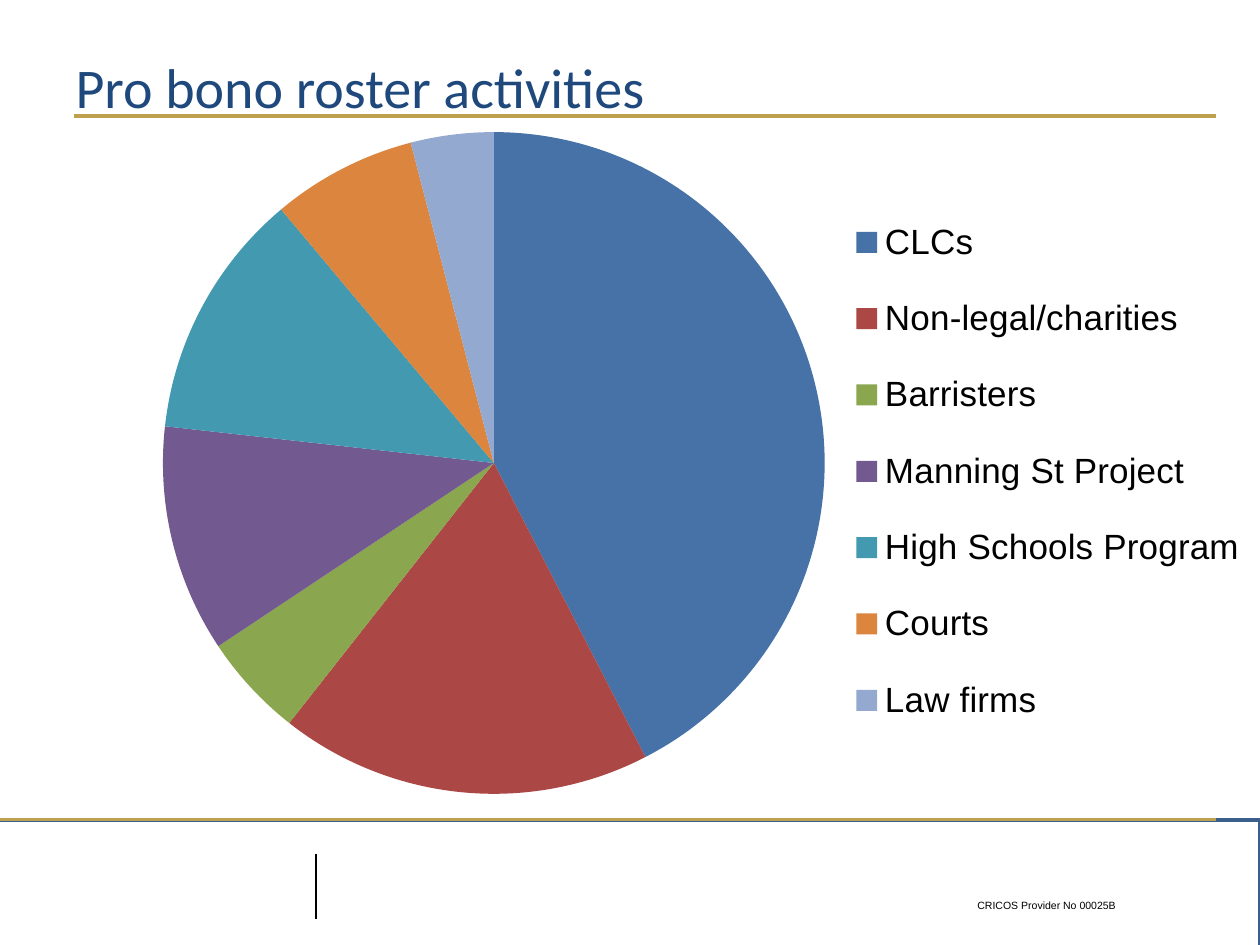
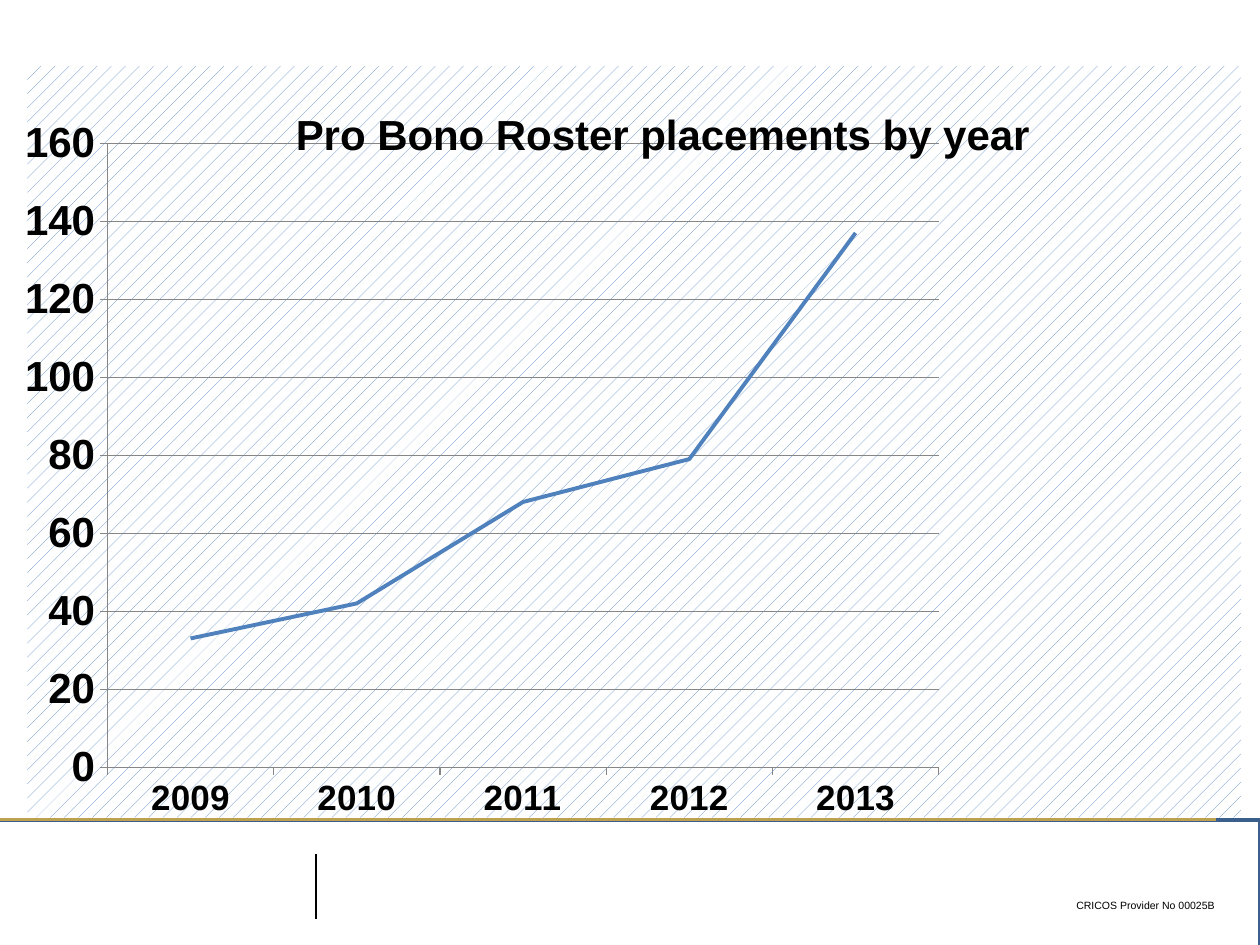
from lxml import etree
from pptx import Presentation
from pptx.chart.data import CategoryChartData
from pptx.dml.color import RGBColor
from pptx.enum.chart import XL_CHART_TYPE, XL_LEGEND_POSITION, XL_TICK_MARK
from pptx.enum.shapes import MSO_CONNECTOR, MSO_SHAPE
from pptx.enum.text import MSO_ANCHOR, PP_ALIGN
from pptx.oxml import parse_xml
from pptx.oxml.ns import nsdecls, qn
from pptx.util import Pt

PIE, LINE = XL_CHART_TYPE.PIE, XL_CHART_TYPE.LINE_STACKED
LEGEND_RIGHT, TICK_OUT = XL_LEGEND_POSITION.RIGHT, XL_TICK_MARK.OUTSIDE
STRAIGHT, RECT = MSO_CONNECTOR.STRAIGHT, MSO_SHAPE.RECTANGLE
LEFT, RIGHT, MIDDLE = PP_ALIGN.LEFT, PP_ALIGN.RIGHT, MSO_ANCHOR.MIDDLE

PX = 7257  # EMU per px, 126 px to the inch
GOLD, NAVY, TITLE_BLUE = "BDA14E", "3A5F8C", "1F497D"
BLACK, WHITE, GREY, SERIES_BLUE = "000000", "FFFFFF", "868686", "4F81BD"
SLICES = [
    ("CLCs", 42, "4672A8"),
    ("Non-legal/charities", 18, "AB4744"),
    ("Barristers", 5, "8AA64F"),
    ("Manning St Project", 11, "725990"),
    ("High Schools Program", 12, "4299B0"),
    ("Courts", 7, "DC853E"),
    ("Law firms", 4, "93A9CF"),
]


def rgb(color):
    return RGBColor.from_string(color)


def place(part, inner=False, **fractions):
    """Give a chart part a fixed place, as fractions of the chart."""
    old = part.find(qn("c:layout"))
    index = 0 if part.tag == qn("c:plotArea") else 1
    if old is not None:
        part.remove(old)
    layout = parse_xml(f"<c:layout {nsdecls('c')}><c:manualLayout/></c:layout>")
    values = {"layoutTarget": "inner"} if inner else {}
    values.update(xMode="edge", yMode="edge", **fractions)
    for name, value in values.items():
        etree.SubElement(layout[0], qn("c:" + name)).set("val", str(value))
    part.insert(index, layout)


prs = Presentation()
prs.slide_width, prs.slide_height = 1260 * PX, 945 * PX
pie_slide = prs.slides.add_slide(prs.slide_layouts[5])
year_slide = prs.slides.add_slide(prs.slide_layouts[6])

# Footer band, rules and provider number
footer_rules = [(-5, 820, 1216, 820, GOLD, 1.75), (316, 854, 316, 919, BLACK, 0.75)]
title_rule = (74, 116, 1216, 116, GOLD, 1.75)
for s, align, rules in [
    (pie_slide, LEFT, footer_rules + [title_rule]),
    (year_slide, RIGHT, footer_rules),
]:
    band = s.shapes.add_shape(RECT, -5 * PX, 820 * PX, 1265 * PX, 169 * PX)
    band.shadow.inherit = False
    band.fill.solid()
    band.fill.fore_color.rgb = rgb(WHITE)
    band.line.color.rgb = rgb(NAVY)
    band.line.width = Pt(2)
    for x1, y1, x2, y2, color, width in rules:
        rule = s.shapes.add_connector(STRAIGHT, x1 * PX, y1 * PX, x2 * PX, y2 * PX)
        rule.line.color.rgb = rgb(color)
        rule.line.width = Pt(width)
        etree.SubElement(rule._element.spPr, qn("a:effectLst"))
    tf = s.shapes.add_textbox(965 * PX, 893 * PX, 262 * PX, 25 * PX).text_frame
    tf.word_wrap = True
    p = tf.paragraphs[0]
    p.alignment = align
    r = p.add_run()
    r.text = "CRICOS Provider No 00025B"
    r.font.size, r.font.name = Pt(6), "Arial"
    r.font.color.rgb = rgb(BLACK)

# Slide 1: title
title = pie_slide.shapes.title
title.left, title.top, title.width, title.height = 63 * PX, 38 * PX, 1113 * PX, 97 * PX
tf = title.text_frame
tf.word_wrap = True
tf.vertical_anchor = MIDDLE
p = tf.paragraphs[0]
p.alignment = LEFT
r = p.add_run()
r.text = "Pro bono roster activities"
r.font.size, r.font.name = Pt(32), "Calibri"
r.font.color.rgb = rgb(TITLE_BLUE)

# Slide 1: roster activities pie
data = CategoryChartData()
data.categories = [name for name, _, _ in SLICES]
data.add_series("Series 1", [value for _, value, _ in SLICES])
pie = pie_slide.shapes.add_chart(PIE, 144 * PX, 116 * PX, 1116 * PX, 697 * PX, data).chart
pie.has_title = False
pie.font.size, pie.font.name = Pt(18), "Arial"
pie.font.color.rgb = rgb(BLACK)
pie.plots[0].vary_by_categories = True
for i, (_, _, color) in enumerate(SLICES):
    fill = pie.plots[0].series[0].points[i].format.fill
    fill.solid()
    fill.fore_color.rgb = rgb(color)
pie.has_legend = True
pie.legend.position = LEGEND_RIGHT
pie.legend.include_in_layout = False
pie.legend.font.size = Pt(20)
place(pie.legend._element, x=0.63, y=0.1, w=0.36, h=0.82)
place(pie._chartSpace.chart.plotArea, inner=True, x=0.017, y=0.023, w=0.593, h=0.95)

# Slide 2: placements by year
data = CategoryChartData()
data.categories = ["2009", "2010", "2011", "2012", "2013"]
data.add_series("Series 1", [33, 42, 68, 79, 137])
years = year_slide.shapes.add_chart(LINE, 25 * PX, 66 * PX, 1216 * PX, 753 * PX, data).chart
years.has_legend = False
years.font.size, years.font.name = Pt(10), "Arial"
years.font.color.rgb = rgb(BLACK)
years.has_title = True
r = years.chart_title.text_frame.paragraphs[0].add_run()
r.text = "Pro Bono Roster placements by year"
r.font.size, r.font.bold = Pt(24), True
place(years.chart_title._element, x=0.215, y=0.045)
place(years._chartSpace.chart.plotArea, inner=True, x=0.066, y=0.103, w=0.685, h=0.83)

series = years.plots[0].series[0]
series.smooth = False
series.format.line.color.rgb = rgb(SERIES_BLUE)
series.format.line.width = Pt(2.25)
for axis, size in [(years.category_axis, 20), (years.value_axis, 24)]:
    axis.major_tick_mark = TICK_OUT
    axis.tick_labels.font.size = Pt(size)
    axis.tick_labels.font.bold = True
    axis.format.line.color.rgb = rgb(GREY)
years.value_axis.minimum_scale, years.value_axis.maximum_scale = 0, 160
years.value_axis.major_unit = 20
years.value_axis.has_major_gridlines = True
years.value_axis.major_gridlines.format.line.color.rgb = rgb(GREY)

# Chart backgrounds
dots = (
    f'<a:pattFill prst="pct10"><a:fgClr><a:srgbClr val="{SERIES_BLUE}"/></a:fgClr>'
    f'<a:bgClr><a:srgbClr val="{WHITE}"/></a:bgClr></a:pattFill>'
)
for chart, fill in [(pie, "<a:noFill/>"), (years, dots)]:
    chart._chartSpace.chart.addnext(
        parse_xml(f"<c:spPr {nsdecls('c', 'a')}>{fill}<a:ln><a:noFill/></a:ln></c:spPr>")
    )

prs.save("out.pptx")
